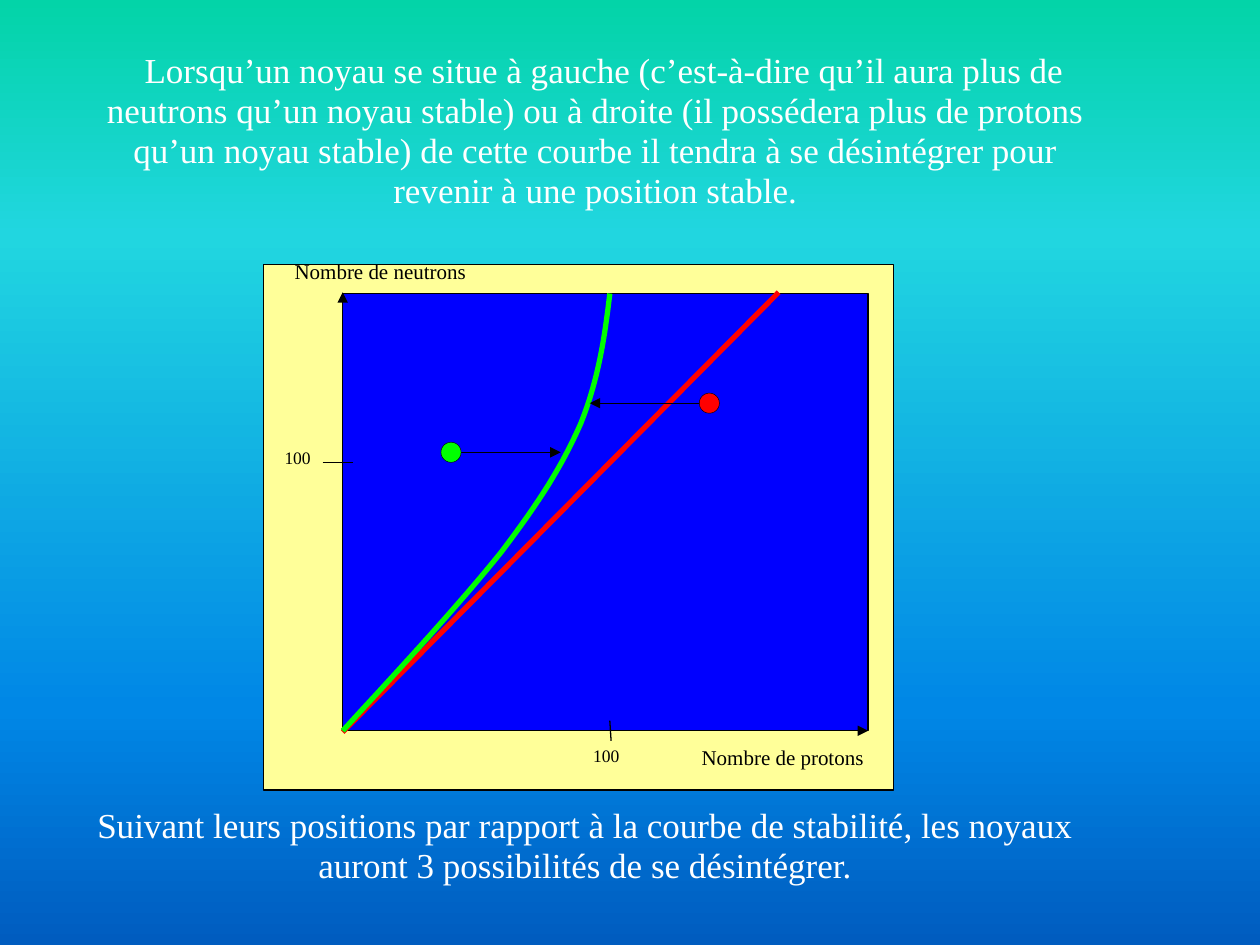
from copy import deepcopy

from pptx import Presentation
from pptx.dml.color import RGBColor
from pptx.enum.shapes import MSO_CONNECTOR, MSO_SHAPE
from pptx.enum.text import MSO_AUTO_SIZE, PP_ALIGN
from pptx.oxml.ns import qn
from pptx.oxml.xmlchemy import OxmlElement
from pptx.util import Inches, Pt

STRAIGHT = MSO_CONNECTOR.STRAIGHT
BOX, OVAL = MSO_SHAPE.ROUNDED_RECTANGLE, MSO_SHAPE.OVAL
LEFT, CENTER = PP_ALIGN.LEFT, PP_ALIGN.CENTER
GROW = MSO_AUTO_SIZE.SHAPE_TO_FIT_TEXT
FONT = "Times New Roman"
COLORS = {"text": "FFFFFF", "ink": "000000", "panel": "FFFF99", "plot": "0000FF",
          "red": "FF0000", "green": "00FF00"}
GRADIENT = {0: "03D4A8", 25: "21D6E0", 75: "0087E6", 100: "005CBF"}
CURVE_START = (0.63, 3.7)
CURVE = [[(1.1, 3.19), (1.57, 2.68), (1.89, 2.28)],
         [(2.2, 1.87), (2.37, 1.6), (2.52, 1.26)],
         [(2.66, 0.91), (2.71, 0.57), (2.75, 0.23)]]
CURVE_STEPS = 16
DOT = 0.16


def color(name):
    return RGBColor.from_string(COLORS[name])


def paint_background(slide):
    fill = slide.background.fill
    fill.gradient()
    fill.gradient_angle = 270
    stops = slide._element.find(".//" + qn("a:gsLst"))
    template = deepcopy(stops[0])
    for stop in list(stops):
        stops.remove(stop)
    for position, value in GRADIENT.items():
        stop = deepcopy(template)
        stop.set("pos", str(position * 1000))
        for child in list(stop):
            stop.remove(child)
        rgb = OxmlElement("a:srgbClr")
        rgb.set("val", value)
        stop.append(rgb)
        stops.append(stop)


def add_text(slide, box, text, size, color_name="ink", align=LEFT, spacing=0.93, indent=0):
    shape = slide.shapes.add_textbox(*(Inches(value) for value in box))
    frame = shape.text_frame
    frame.word_wrap = True
    frame.auto_size = GROW
    paragraph = frame.paragraphs[0]
    paragraph.text = text
    if indent:
        paragraph._p.get_or_add_pPr().set("indent", str(Inches(indent)))
    for name, value in {"alignment": align, "line_spacing": spacing}.items():
        setattr(paragraph, name, value)
    for name, value in {"name": FONT, "size": Pt(size)}.items():
        setattr(paragraph.font, name, value)
    paragraph.font.color.rgb = color(color_name)


def add_filled(slide, kind, box, fill, line_width=0.75):
    shape = slide.shapes.add_shape(kind, *(Inches(value) for value in box))
    shape.shadow.inherit = False
    if kind == BOX:
        shape.adjustments[0] = 0
    shape.fill.solid()
    shape.fill.fore_color.rgb = color(fill)
    shape.line.color.rgb = color("ink")
    shape.line.width = Pt(line_width)


def add_line(slide, start, end, color_name="ink", width=0.75, arrow=False):
    points = [Inches(value) for value in (*start, *end)]
    connector = slide.shapes.add_connector(STRAIGHT, *points)
    connector.line.color.rgb = color(color_name)
    connector.line.width = Pt(width)
    if arrow:
        head = OxmlElement("a:tailEnd")
        head.set("type", "triangle")
        connector.line._get_or_add_ln().append(head)
    connector._element.spPr.append(OxmlElement("a:effectLst"))


def bezier_points(start, segments):
    """Sample a chain of cubic curves."""
    points = []
    for first, second, end in segments:
        for step in range(1, CURVE_STEPS + 1):
            t = step / CURVE_STEPS
            u = 1 - t
            weights = (u ** 3, 3 * u * u * t, 3 * u * t * t, t ** 3)
            corners = (start, first, second, end)
            points.append(tuple(sum(w * corner[axis] for w, corner in zip(weights, corners))
                                for axis in (0, 1)))
        start = end
    return points


def add_stability_curve(slide, place):
    start = [Inches(value) for value in place(*CURVE_START)]
    points = [tuple(Inches(value) for value in place(*point))
              for point in bezier_points(CURVE_START, CURVE)]
    builder = slide.shapes.build_freeform(*start)
    builder.add_line_segments(points, close=False)
    shape = builder.convert_to_shape()
    shape.shadow.inherit = False
    shape.fill.background()
    shape.line.color.rgb = color("green")
    shape.line.width = Pt(3)


def add_diagram(slide, left, top, width, height):
    def place(x, y):
        return left + x, top + y

    # Panel and plot area
    add_filled(slide, BOX, (left, top, width, height), "panel")
    add_filled(slide, BOX, (*place(0.63, 0.23), width - 0.83, height - 0.7), "plot")

    # Ticks and axis arrows
    for start, end, arrow in [((2.75, 3.62), (2.76, 3.78), False),
                              ((0.47, 1.57), (0.71, 1.57), False),
                              ((4.41, 3.7), (4.8, 3.7), True),
                              ((0.63, 0.48), (0.63, 0.22), True)]:
        add_line(slide, place(*start), place(*end), arrow=arrow)

    # Axis labels
    for x, y, label_width, label_height, text, size in [
            (0.07, 1.41, 0.55, 0.27, "100", 10),
            (2.52, 3.78, 0.55, 0.27, "100", 10),
            (0.15, -0.08, 1.73, 0.6, "Nombre de neutrons", 12),
            (3.38, 3.78, 1.89, 0.3, "Nombre de protons", 12)]:
        add_text(slide, (*place(x, y), label_width, label_height), text, size)

    # Diagonal and stability curve
    add_line(slide, place(0.63, 3.71), place(4.09, 0.22), "red", 3)
    add_stability_curve(slide, place)

    # Unstable nuclei moving towards the curve
    for center, start_x, end_x, fill in [((1.49, 1.49), 1.49, 2.36, "green"),
                                         ((3.54, 1.1), 3.47, 2.59, "red")]:
        x, y = center
        add_line(slide, place(start_x, y), place(end_x, y), arrow=True)
        add_filled(slide, OVAL, (*place(x - DOT / 2, y - DOT / 2), DOT, DOT), fill, 0.25)


def main():
    presentation = Presentation()
    presentation.slide_width, presentation.slide_height = Inches(10), Inches(7.5)
    slide = presentation.slides.add_slide(presentation.slide_layouts[6])
    paint_background(slide)

    # Introduction and conclusion
    add_text(slide, (0.59, 0.36, 8.27, 1.44),
             "Lorsqu’un noyau se situe à gauche (c’est-à-dire qu’il aura plus de neutrons "
             "qu’un noyau stable) ou à droite (il possédera plus de protons qu’un noyau "
             "stable) de cette courbe il tendra à se désintégrer pour revenir à une "
             "position stable.", 20, "text", CENTER, 0.95, indent=0.14)
    add_text(slide, (0.51, 6.35, 8.27, 0.77),
             "Suivant leurs positions par rapport à la courbe de stabilité, les noyaux "
             "auront 3 possibilités de se désintégrer.", 20, "text", CENTER, 0.95)

    add_diagram(slide, 2.09, 2.1, 5, 4.17)
    presentation.save("out.pptx")


if __name__ == "__main__":
    main()
